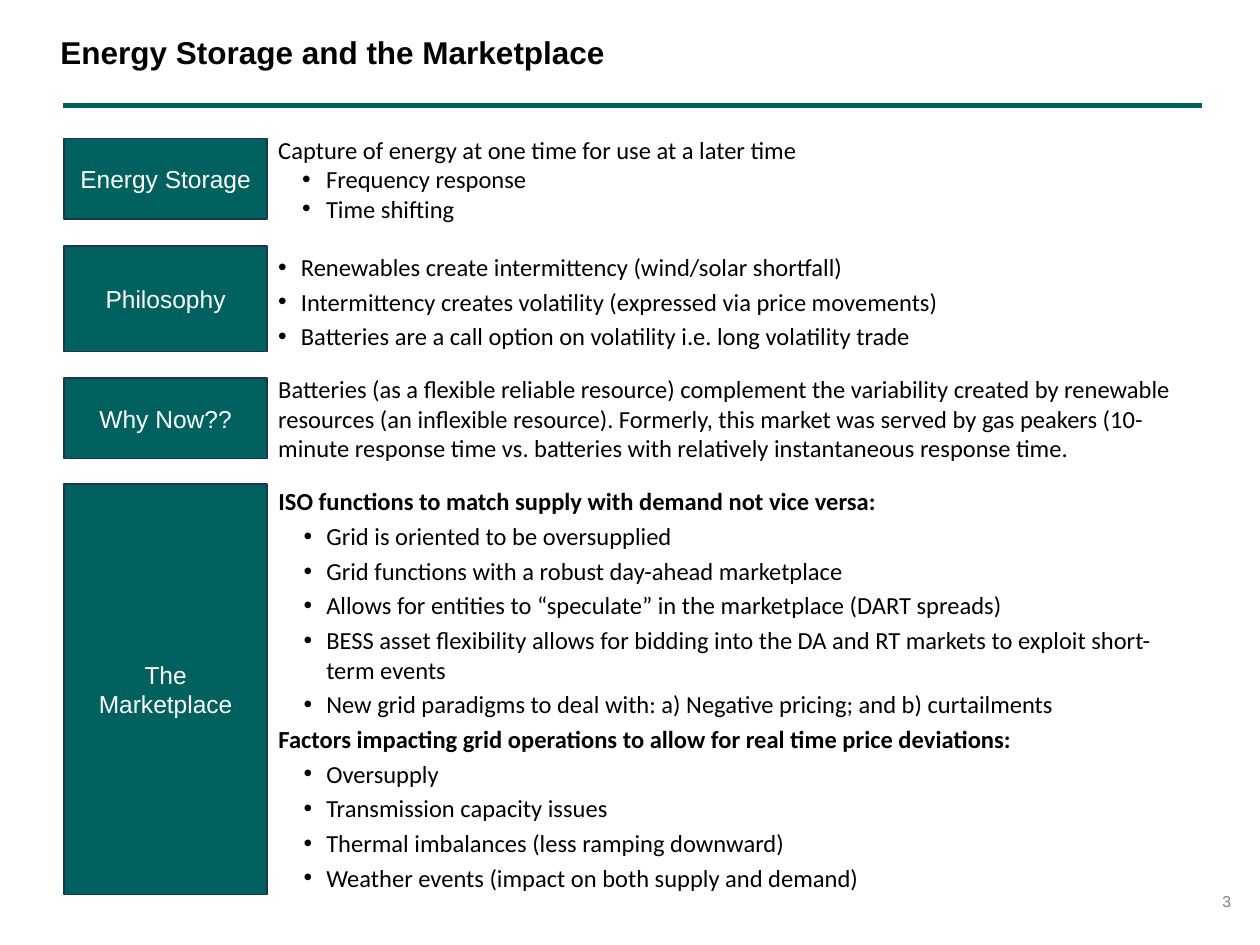
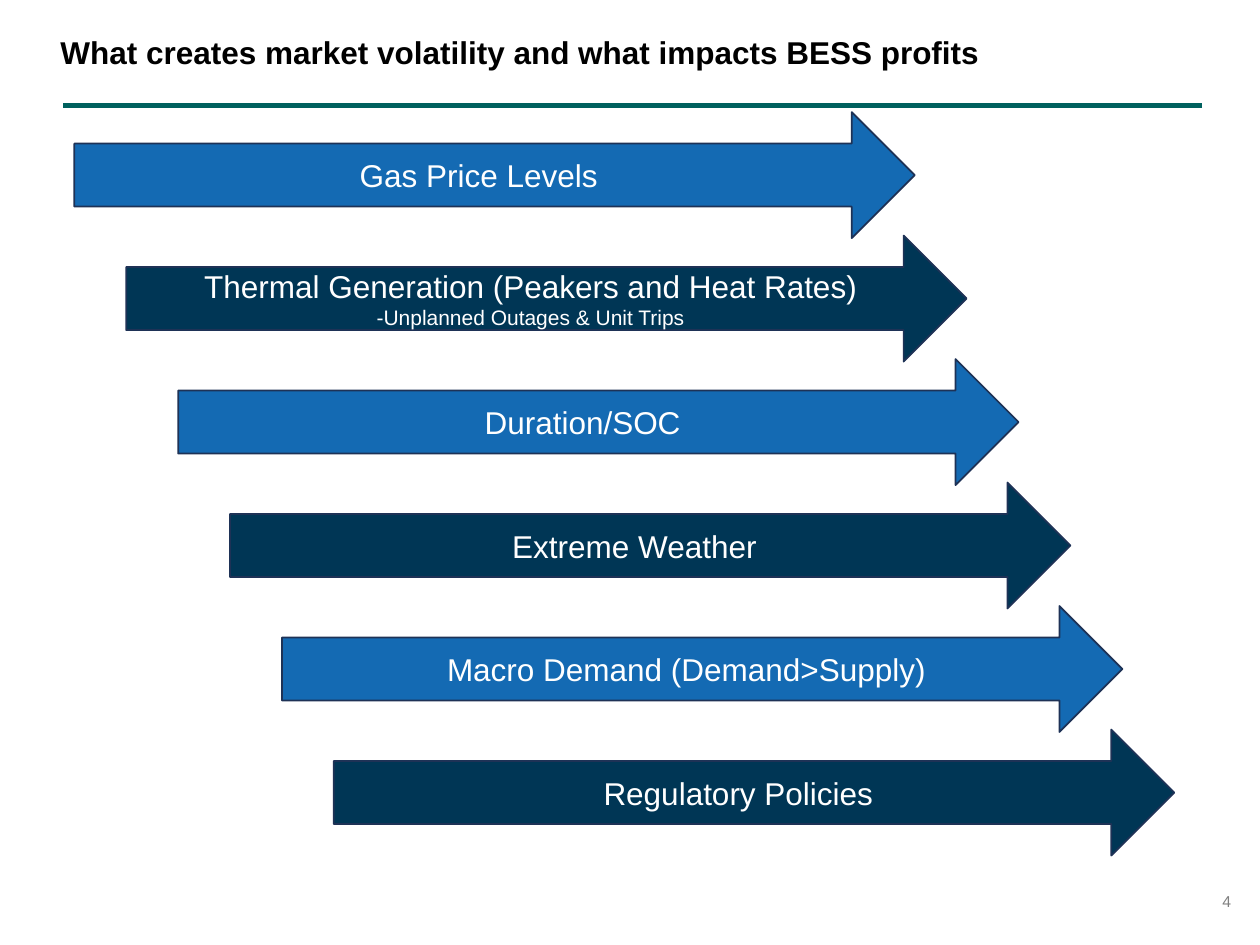
from lxml import etree
from pptx import Presentation
from pptx import util as u
from pptx.dml.color import RGBColor
from pptx.enum import shapes, text
from pptx.oxml import ns

TEAL = RGBColor(0x00, 0x61, 0x5E)
NAVY = RGBColor(0x00, 0x36, 0x55)
BLUE = RGBColor(0x14, 0x6A, 0xB3)
EDGE = RGBColor(0x1E, 0x32, 0x56)
GREY = RGBColor(0x80, 0x80, 0x80)
BLACK = RGBColor(0, 0, 0)
WHITE = RGBColor(0xFF, 0xFF, 0xFF)

COLS, ROWS = 100, 75  # grid cells across and down the slide
LEFT, CENTER, RIGHT = text.PP_ALIGN.LEFT, text.PP_ALIGN.CENTER, text.PP_ALIGN.RIGHT
TOP, MIDDLE = text.MSO_ANCHOR.TOP, text.MSO_ANCHOR.MIDDLE


def assign(obj, vals):
    for key, val in vals.items():
        setattr(obj, key, val)


class Deck:
    """Holds the shared style and the slide being built."""

    def __init__(self):
        self.prs = Presentation()
        assign(self.prs, dict(slide_width=u.Inches(10), slide_height=u.Inches(7.5)))
        self.slide = None

    def place(self, x, y, w, h):
        dx, dy = self.prs.slide_width / COLS, self.prs.slide_height / ROWS
        return [round(v) for v in (x * dx, y * dy, w * dx, h * dy)]

    def page(self, layout, title, num):
        """Start a slide with title, rule and page number."""
        self.slide = self.prs.slides.add_slide(self.prs.slide_layouts[layout])
        head = self.slide.shapes.title
        self.move(head, (-2.2, 0.5, 108.4, 7.6))
        self.fill(head, [title], size=18, bold=True, line=0.9)
        assign(head.text_frame, dict(margin_left=u.Inches(0.7), margin_right=u.Inches(1.5)))
        self.rule(95.4, 5, 8.4)
        self.note([str(num)], (90.2, 69.5, 8.5, 4), size=9, color=GREY, align=RIGHT)

    def move(self, shape, box):
        assign(shape, dict(zip(("left", "top", "width", "height"), self.place(*box))))

    def rule(self, x1, x2, y):
        a, b = self.place(x1, y, 0, 0), self.place(x2, y, 0, 0)
        line = self.slide.shapes.add_connector(
            shapes.MSO_CONNECTOR.STRAIGHT, a[0], a[1], b[0], b[1])
        line.line.color.rgb = TEAL
        line.line.width = u.Pt(3)
        etree.SubElement(line._element.spPr, ns.qn("a:effectLst"))

    def block(self, kind, lines, box, color, size):
        """Filled, outlined shape with centred white text."""
        shape = self.slide.shapes.add_shape(kind, *self.place(*box))
        shape.shadow.inherit = False
        shape.fill.solid()
        shape.fill.fore_color.rgb = color
        shape.line.color.rgb = EDGE
        shape.line.width = u.Pt(1)
        self.fill(shape, lines, size=size, color=WHITE, align=CENTER)
        return shape

    def note(self, lines, box, **style):
        self.fill(self.slide.shapes.add_textbox(*self.place(*box)), lines, **style)

    def body(self, lines, box, **style):
        shape = self.slide.placeholders[1]
        self.move(shape, box)
        self.fill(shape, lines, **style)

    def fill(self, shape, lines, size=14, face="Arial", color=BLACK, bold=False,
             align=LEFT, anchor=MIDDLE, after=0, line=1.0, dent=(0.38, 0.19)):
        """Put text in a shape; "• " starts a list item, "# " a bold lead."""
        frame = shape.text_frame
        assign(frame, dict(word_wrap=True, auto_size=text.MSO_AUTO_SIZE.NONE,
                           vertical_anchor=anchor))
        for i, words in enumerate(lines):
            para = frame.add_paragraph() if i else frame.paragraphs[0]
            item, lead = words.startswith("• "), words.startswith("# ")
            self.bullet(para, item, dent)
            para.text = words[2:] if item or lead else words
            assign(para, dict(alignment=align, line_spacing=line,
                              space_before=u.Pt(0), space_after=u.Pt(after)))
            assign(para.font, dict(size=u.Pt(size), name=face, bold=bold or lead))
            para.font.color.rgb = color

    def bullet(self, para, item, dent):
        props = para._p.get_or_add_pPr()
        left, hang = dent if item else (0, 0)
        props.set("marL", str(u.Inches(left)))
        props.set("indent", str(-u.Inches(hang)))
        if item:
            etree.SubElement(props, ns.qn("a:buFont")).set("typeface", "Arial")
            etree.SubElement(props, ns.qn("a:buChar")).set("char", "•")
        else:
            etree.SubElement(props, ns.qn("a:buNone"))


def market(deck):
    deck.page(1, "Energy Storage and the Marketplace", 3)

    # Each row: label, top, height, text and its style
    rows = [
        ("Energy Storage", 11, 6.4, [
            "Capture of energy at one time for use at a later time",
            "• Frequency response",
            "• Time shifting"], {}),
        ("Philosophy", 19.5, 8.4, [
            "• Renewables create intermittency (wind/solar shortfall)",
            "• Intermittency creates volatility (expressed via price movements)",
            "• Batteries are a call option on volatility i.e. long volatility trade"],
         dict(anchor=TOP, after=3, dent=(0.18, 0.18))),
        ("Why Now??", 30, 6.4, [
            "Batteries (as a flexible reliable resource) complement the variability "
            "created by renewable resources (an inflexible resource). Formerly, this "
            "market was served by gas peakers (10- minute response time vs. batteries "
            "with relatively instantaneous response time."], dict(after=3)),
        ("The Marketplace", 38.4, 32.6, [
            "# ISO functions to match supply with demand not vice versa:",
            "• Grid is oriented to be oversupplied",
            "• Grid functions with a robust day-ahead marketplace",
            "• Allows for entities to “speculate” in the marketplace (DART spreads)",
            "• BESS asset flexibility allows for bidding into the DA and RT markets "
            "to exploit short-term events",
            "• New grid paradigms to deal with: a) Negative pricing; and b) curtailments",
            "# Factors impacting grid operations to allow for real time price deviations:",
            "• Oversupply",
            "• Transmission capacity issues",
            "• Thermal imbalances (less ramping downward)",
            "• Weather events (impact on both supply and demand)"],
         dict(after=3, dent=(0.38, 0.18))),
    ]
    for label, top, high, lines, style in rows:
        deck.block(shapes.MSO_SHAPE.RECTANGLE, [label], (5.1, top, 16.1, high), TEAL, 14)
        put = deck.body if label == "The Marketplace" else deck.note
        put(lines, (21.1, top, 74.6, high), face="Calibri", **style)


def drivers(deck):
    deck.page(5, "What creates market volatility and what impacts BESS profits", 4)

    # Arrows step down and to the right
    names = [
        ["Gas Price Levels"],
        ["Thermal Generation (Peakers and Heat Rates)", "-Unplanned Outages & Unit Trips"],
        ["Duration/SOC"],
        ["Extreme Weather"],
        ["Macro Demand (Demand>Supply)"],
        ["Regulatory Policies"],
    ]
    for i, lines in enumerate(names):
        box = (5.9 + 4.12 * i, 8.9 + 9.8 * i, 66.7, 10)
        arrow = deck.block(shapes.MSO_SHAPE.RIGHT_ARROW, lines, box, (BLUE, NAVY)[i % 2], 18)
        for para in arrow.text_frame.paragraphs[1:]:
            para.font.size = u.Pt(12)


def main():
    deck = Deck()
    market(deck)
    drivers(deck)
    deck.prs.save("out.pptx")


if __name__ == "__main__":
    main()
